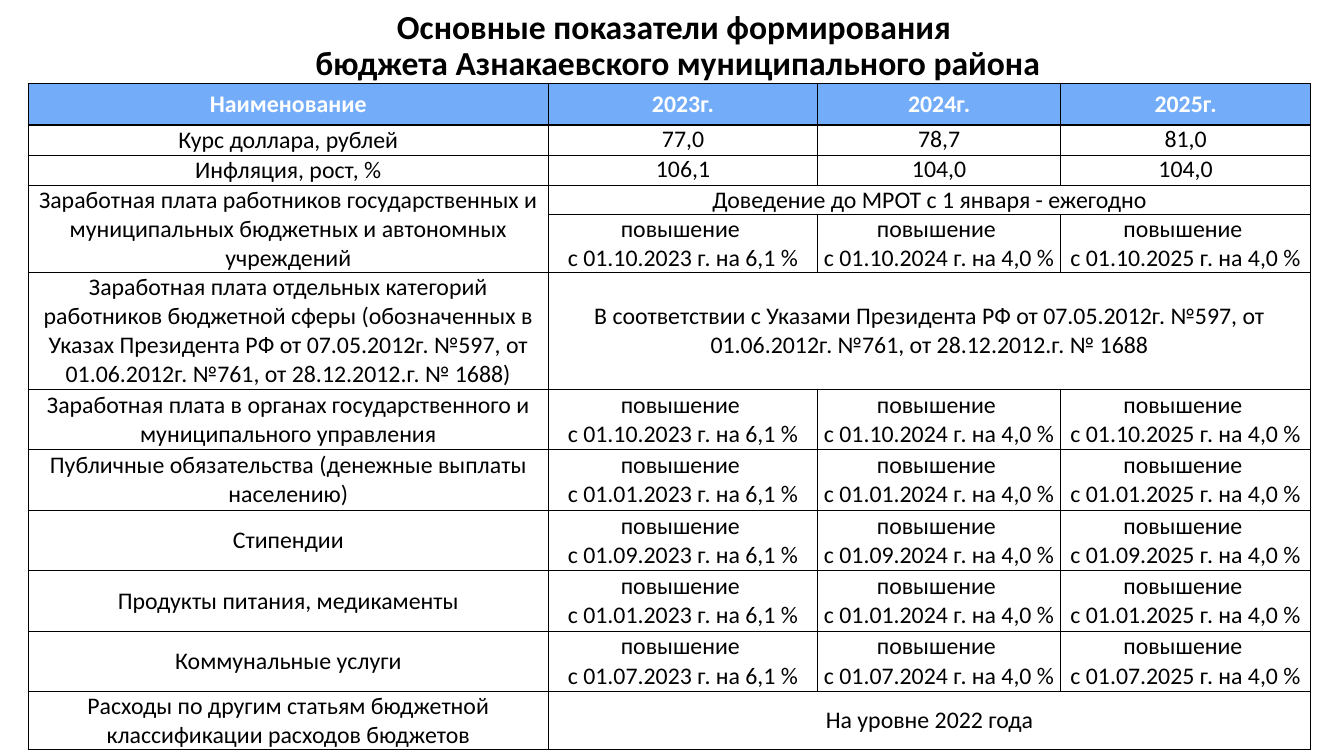
"""Builds the slide with the main indicators of the district budget."""
import pptx
import pptx.util
import pptx.dml.color
import pptx.enum.text
import pptx.oxml
import pptx.oxml.ns

Inches = pptx.util.Inches
Pt = pptx.util.Pt
COLORS = {"text": "000000", "header": "73ACF8", "header_text": "FFFFFF", "border": "000000"}
RATES = {"2023": "6,1", "2024": "4,0", "2025": "4,0"}
COL_WIDTHS = [5.16, 2.67, 2.41, 2.48]
ROW_HEIGHTS = [0.41, 0.3, 0.3, 0.28, 0.57, 1.13] + [0.6] * 5 + [0.57]


def raises(date):
    return [f"повышение \nс {date}.{year} г. на {rate} %" for year, rate in RATES.items()]


ROWS = [
    ["Наименование"] + [f"{year}г." for year in RATES],
    ["Курс доллара, рублей", "77,0", "78,7", "81,0"],
    ["Инфляция, рост, %", "106,1", "104,0", "104,0"],
    ["Заработная плата работников государственных и муниципальных бюджетных "
     "и автономных учреждений", "Доведение до МРОТ с 1 января - ежегодно"],
    [None] + raises("01.10"),
    ["Заработная плата отдельных категорий работников бюджетной сферы (обозначенных в Указах "
     "Президента РФ от 07.05.2012г. №597, от 01.06.2012г. №761, от 28.12.2012.г. № 1688)",
     "В соответствии с Указами Президента РФ от 07.05.2012г. №597, "
     "от 01.06.2012г. №761, от 28.12.2012.г. № 1688"],
    ["Заработная плата в органах государственного и муниципального управления"] + raises("01.10"),
    ["Публичные обязательства (денежные выплаты населению)"] + raises("01.01"),
    ["Стипендии"] + raises("01.09"),
    ["Продукты питания, медикаменты"] + raises("01.01"),
    ["Коммунальные услуги"] + raises("01.07"),
    ["Расходы по другим статьям бюджетной классификации расходов бюджетов", "На уровне 2022 года"],
]


def write(tf, text, size=17, color="text", bold=False, spacing=1.0, after=0):
    tf.word_wrap = True
    for i, line in enumerate(text.split("\n")):
        p = tf.paragraphs[0] if i == 0 else tf.add_paragraph()
        p.alignment = pptx.enum.text.PP_ALIGN.CENTER
        p.line_spacing = spacing
        p.space_before = Pt(0)
        p.space_after = Pt(after)
        r = p.add_run()
        r.text = line
        r.font.name = "Calibri"
        r.font.size = Pt(size)
        r.font.bold = bold
        r.font.color.rgb = pptx.dml.color.RGBColor.from_string(COLORS[color])


class Deck:
    def __init__(self):
        self.prs = pptx.Presentation()
        self.prs.slide_width = Inches(13.33)
        self.prs.slide_height = Inches(7.5)
        self.s = self.prs.slides.add_slide(self.prs.slide_layouts[5])

    def title(self, text, left, top, width, height):
        sp = self.s.shapes.title
        sp.left, sp.top, sp.width, sp.height = map(Inches, (left, top, width, height))
        tf = sp.text_frame
        tf.vertical_anchor = pptx.enum.text.MSO_ANCHOR.TOP
        tf.auto_size = pptx.enum.text.MSO_AUTO_SIZE.NONE
        write(tf, text, size=24, bold=True, spacing=0.9)

    def border(self, cell):
        tc_pr = cell._tc.get_or_add_tcPr()
        for i, side in enumerate("LRTB"):
            tc_pr.insert(i, pptx.oxml.parse_xml(
                f'<a:ln{side} {pptx.oxml.ns.nsdecls("a")} w="{Pt(1)}"><a:solidFill>'
                f'<a:srgbClr val="{COLORS["border"]}"/></a:solidFill></a:ln{side}>'))

    def cell(self, cell, header, margin, anchor):
        cell.margin_left = cell.margin_right = Inches(margin)
        cell.margin_top = cell.margin_bottom = 0
        cell.vertical_anchor = anchor
        if header:
            cell.fill.solid()
            cell.fill.fore_color.rgb = pptx.dml.color.RGBColor.from_string(COLORS["header"])
        else:
            cell.fill.background()
        self.border(cell)

    def table(self, rows, left, top, widths, heights):
        table = self.s.shapes.add_table(
            len(rows), len(widths), Inches(left), Inches(top),
            Inches(sum(widths)), Inches(sum(heights))).table
        table.first_row = table.horz_banding = False
        for col, width in zip(table.columns, widths):
            col.width = Inches(width)
        anchors = pptx.enum.text.MSO_ANCHOR
        for y, (row, height) in enumerate(zip(rows, heights)):
            table.rows[y].height = Inches(height)
            for x in range(len(widths)):
                number = y in (1, 2) and x > 0
                self.cell(table.cell(y, x), y == 0, 0.08 if number else 0.05,
                          anchors.TOP if number else anchors.MIDDLE)
            if row[0] is None:
                table.cell(y - 1, 0).merge(table.cell(y, 0))
            if len(row) == 2:
                table.cell(y, 1).merge(table.cell(y, len(widths) - 1))
            style = dict(color="header_text", bold=True, after=10) if y == 0 else {}
            for x, text in enumerate(row):
                if text:
                    write(table.cell(y, x).text_frame, text, **style)


def main():
    deck = Deck()
    deck.title("Основные показатели формирования\n бюджета Азнакаевского муниципального района",
               1.51, 0.05, 10.35, 0.83)
    deck.table(ROWS, 0.28, 0.83, COL_WIDTHS, ROW_HEIGHTS)
    deck.prs.save("out.pptx")


if __name__ == "__main__":
    main()
